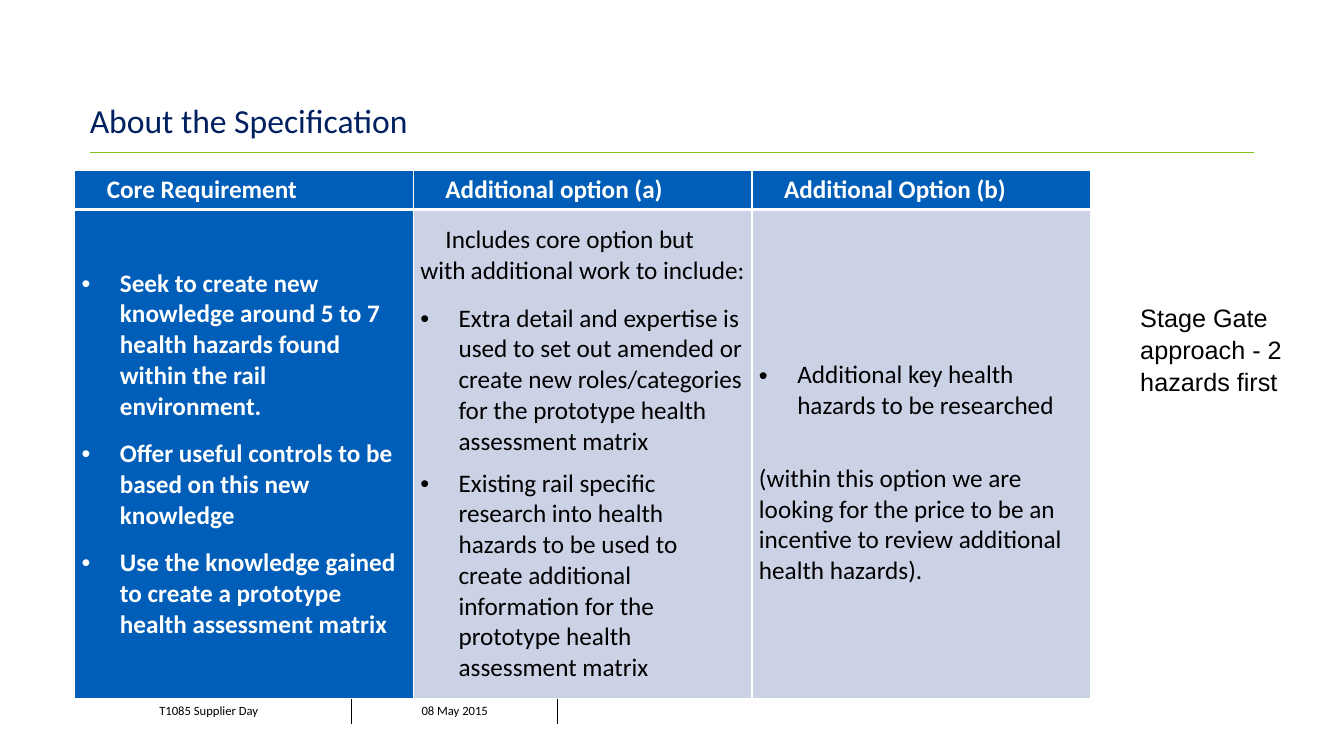
"""Builds the slide that compares the core requirement with two options."""
from lxml.etree import SubElement
from pptx import Presentation
from pptx.dml.color import RGBColor
from pptx.enum.shapes import MSO_CONNECTOR
from pptx.enum.text import MSO_ANCHOR, PP_ALIGN
from pptx.oxml.ns import qn
from pptx.util import Inches, Pt

NAVY = RGBColor(0x00, 0x20, 0x60)
BLUE = RGBColor(0x00, 0x5E, 0xB8)
PALE = RGBColor(0xCC, 0xD2, 0xE6)
GREEN = RGBColor(0x7F, 0xC3, 0x1C)
BLACK = RGBColor(0x00, 0x00, 0x00)
WHITE = RGBColor(0xFF, 0xFF, 0xFF)

HEADERS = ["Core Requirement", "Additional option (a)", "Additional Option (b)"]
BODY = [
    [("bullet", 0, "Seek to create new knowledge around 5 to 7 health hazards "
      "found within the rail environment."),
     ("bullet", 12, "Offer useful controls to be based on this new knowledge"),
     ("bullet", 12, "Use the knowledge gained to create a prototype health "
      "assessment matrix")],
    [("indent", 0, "Includes core option but with\tadditional work to include:"),
     ("bullet", 12, "Extra detail and expertise is used to set out amended or "
      "create new roles/categories for the prototype health assessment matrix"),
     ("bullet", 8, "Existing rail specific research into health hazards to be "
      "used to create additional information for the prototype health "
      "assessment matrix")],
    [("bullet", 0, "Additional key health hazards to be researched"),
     ("plain", 30, "(within this option we are looking for the price to be an "
      "incentive to review additional health hazards).")],
]


class SlideKit:
    """Style and current slide, measured on a grid of 100 columns by 100 rows."""

    font = "Calibri"
    indents = {"plain": (0, 0), "indent": (0, 0.25), "bullet": (0.38, -0.38)}

    def __init__(self, prs):
        self.prs = prs
        self.s = prs.slides.add_slide(prs.slide_layouts[6])

    def x(self, cols):
        return round(self.prs.slide_width * cols / 100)

    def y(self, rows):
        return round(self.prs.slide_height * rows / 100)

    def box(self, left, top, width, height):
        return self.x(left), self.y(top), self.x(width), self.y(height)

    def run(self, p, text, size, color, bold=False, font=None):
        r = p.add_run()
        r.text = text
        r.font.size, r.font.bold = Pt(size), bold
        r.font.name = font or self.font
        r.font.color.rgb = color

    def paragraph(self, p, kind, before=0):
        margin, first = self.indents[kind]
        pPr = p._p.get_or_add_pPr()
        pPr.set("marL", str(Inches(margin)))
        pPr.set("indent", str(Inches(first)))
        if kind == "bullet":
            SubElement(pPr, qn("a:buFont"), typeface="Arial")
            SubElement(pPr, qn("a:buChar"), char="•")
        elif kind == "indent":
            tabs = SubElement(pPr, qn("a:tabLst"))
            SubElement(tabs, qn("a:tab"), pos=str(Inches(0.62)), algn="l")
        p.space_before, p.space_after = Pt(before), Pt(0)

    def text(self, area, text, size, color, anchor, inset, font=None, spacing=1.0):
        tf = self.s.shapes.add_textbox(*self.box(*area)).text_frame
        tf.word_wrap, tf.vertical_anchor = True, anchor
        tf.margin_left = tf.margin_right = Inches(inset[0])
        tf.margin_top = tf.margin_bottom = Inches(inset[1])
        p = tf.paragraphs[0]
        p.line_spacing = spacing
        self.run(p, text, size, color, font=font)

    def line(self, x1, y1, x2, y2, color, width):
        cn = self.s.shapes.add_connector(
            MSO_CONNECTOR.STRAIGHT, self.x(x1), self.y(y1), self.x(x2), self.y(y2))
        cn.line.color.rgb, cn.line.width = color, Pt(width)
        SubElement(cn._element.spPr, qn("a:effectLst"))

    def table(self, left, top, col, rows, count):
        area = self.box(left, top, col * count, sum(rows))
        table = self.s.shapes.add_table(len(rows), count, *area).table
        table.first_row = table.horz_banding = False
        for column in table.columns:
            column.width = self.x(col)
        for row, height in zip(table.rows, rows):
            row.height = self.y(height)
        return table

    def cell(self, cell, inset, borders, color=None):
        cell.vertical_anchor = MSO_ANCHOR.MIDDLE
        cell.margin_left = cell.margin_right = Inches(inset[0])
        cell.margin_top = cell.margin_bottom = Inches(inset[1])
        tcPr = cell._tc.get_or_add_tcPr()
        for side, (ink, width) in zip("LRTB", borders):
            ln = SubElement(tcPr, qn("a:ln" + side), w=str(Pt(width)))
            if width:
                fill = SubElement(ln, qn("a:solidFill"))
                SubElement(fill, qn("a:srgbClr"), val=str(ink))
            else:
                SubElement(ln, qn("a:noFill"))
        if color is None:
            cell.fill.background()
        else:
            cell.fill.solid()
            cell.fill.fore_color.rgb = color


def add_footer(kit):
    table = kit.table(10.88, 92.4, 15.3, [3.33], 3)
    none, rule = (BLACK, 0), (BLACK, 1)
    labels = [("T1085 Supplier Day", PP_ALIGN.LEFT, none, rule),
              ("08 May 2015", PP_ALIGN.CENTER, rule, rule),
              ("", PP_ALIGN.LEFT, rule, none)]
    for cell, (label, align, left, right) in zip(table.rows[0].cells, labels):
        kit.cell(cell, (0.13, 0.05), [left, right, none, none])
        p = cell.text_frame.paragraphs[0]
        p.alignment = align
        if label:
            kit.run(p, label, 9, BLACK)
        else:
            SubElement(p._p, qn("a:endParaRPr"), sz="900")


def add_options(kit):
    table = kit.table(5.55, 22.53, 25.2, [5.2, 64.67], len(HEADERS))
    thin, thick = (WHITE, 1), (WHITE, 3)
    for i, (header, items) in enumerate(zip(HEADERS, BODY)):
        cell = table.cell(0, i)
        kit.cell(cell, (0.07, 0), [thin, thin, thin, thick], BLUE)
        p = cell.text_frame.paragraphs[0]
        kit.paragraph(p, "indent")
        kit.run(p, header, 18, WHITE, True)

        core = i == 0
        cell = table.cell(1, i)
        kit.cell(cell, (0.07, 0), [thin, thin, thick, thin], BLUE if core else PALE)
        tf = cell.text_frame
        for n, (kind, before, text) in enumerate(items):
            p = tf.add_paragraph() if n else tf.paragraphs[0]
            kit.paragraph(p, kind, before)
            kit.run(p, text, 18, WHITE if core else BLACK, core)
    table.cell(1, 2).margin_top = Inches(0.38)


def main():
    prs = Presentation()
    prs.slide_width, prs.slide_height = Inches(13.33), Inches(7.5)
    kit = SlideKit(prs)
    add_footer(kit)
    kit.line(6.68, 20.13, 93.32, 20.13, GREEN, 0.6)
    kit.text((6.68, 6.67, 86.65, 11.87), "About the Specification", 24, NAVY,
             MSO_ANCHOR.BOTTOM, (0, 0))
    add_options(kit)
    kit.text((84.1, 39.07, 13.43, 21.6), "Stage Gate approach - 2 hazards first",
             18, BLACK, MSO_ANCHOR.TOP, (0.1, 0.05), "Arial", 1.06)
    prs.save("out.pptx")


if __name__ == "__main__":
    main()
